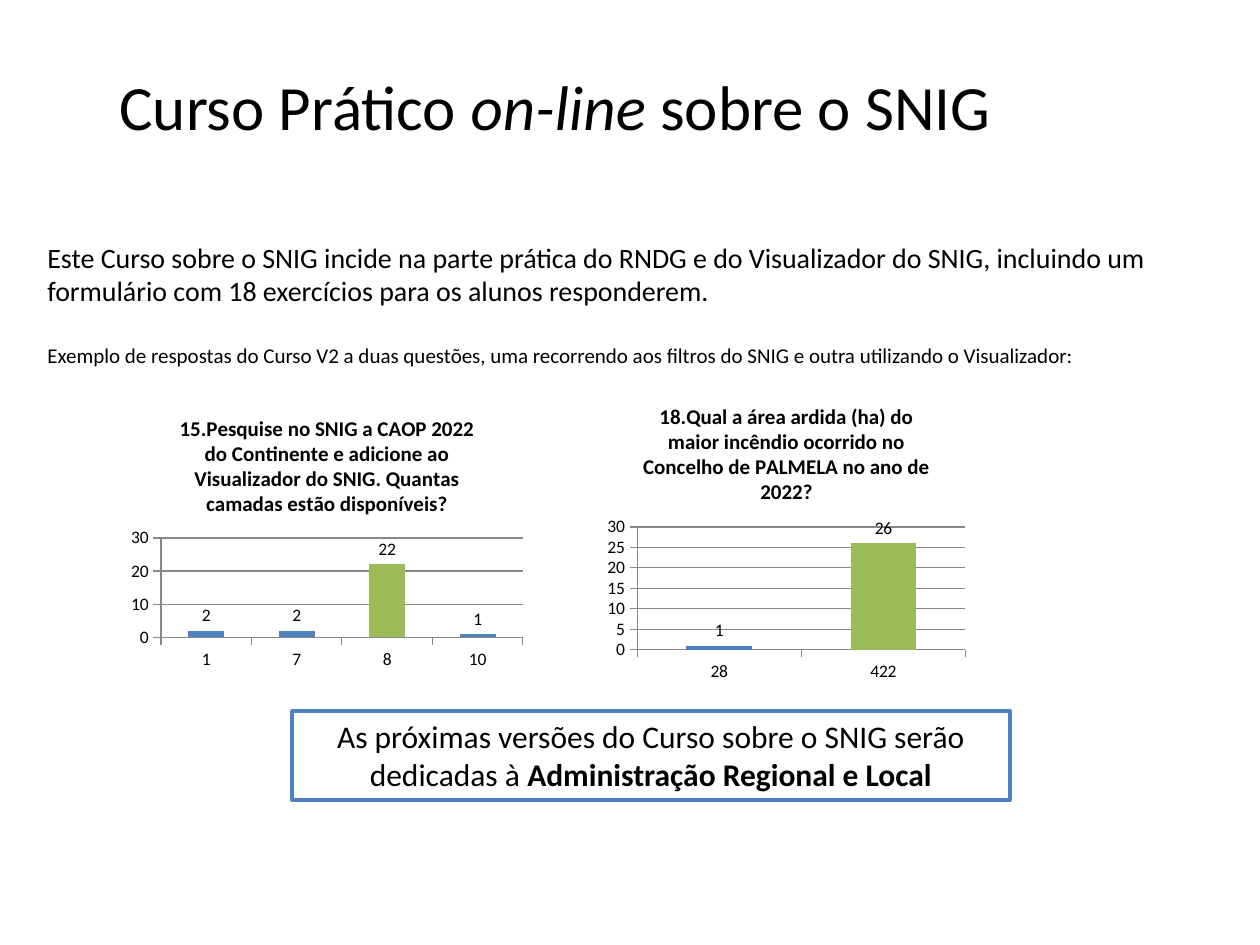
"""Build the slide about the practical on-line SNIG course."""
from dataclasses import dataclass
from typing import Any

from pptx import Presentation
from pptx.chart.data import CategoryChartData
from pptx.dml.color import RGBColor
from pptx.enum.chart import XL_CHART_TYPE, XL_LABEL_POSITION, XL_TICK_MARK
from pptx.enum.shapes import MSO_SHAPE
from pptx.enum.text import MSO_ANCHOR, PP_ALIGN
from pptx.util import Emu, Pt

COLUMNS = XL_CHART_TYPE.COLUMN_CLUSTERED
OUTSIDE_END = XL_LABEL_POSITION.OUTSIDE_END
TICK_OUTSIDE = XL_TICK_MARK.OUTSIDE
RECTANGLE = MSO_SHAPE.RECTANGLE
MIDDLE, TOP = MSO_ANCHOR.MIDDLE, MSO_ANCHOR.TOP
CENTER, LEFT = PP_ALIGN.CENTER, PP_ALIGN.LEFT

PX_PER_INCH = 126
EMU_PER_PX = 914400 / PX_PER_INCH
FONT = "Calibri"
COLORS = {
    "text": "000000",
    "paper": "FFFFFF",
    "bar": "4F81BD",
    "correct": "9BBB59",
    "axis": "878787",
}


@dataclass(frozen=True)
class Box:
    left: int
    top: int
    width: int
    height: int

    def emu(self) -> tuple[Emu, ...]:
        return tuple(px(n) for n in (self.left, self.top, self.width, self.height))


@dataclass(frozen=True)
class Run:
    text: str
    bold: bool = False
    italic: bool = False


@dataclass(frozen=True)
class Question:
    box: Box
    title: str
    answers: dict[str, int]
    correct: str
    major_unit: int


QUESTIONS = (
    Question(
        Box(123, 398, 408, 277),
        "15.Pesquise no SNIG a CAOP 2022 do Continente e adicione ao "
        "Visualizador do SNIG. Quantas camadas estão disponíveis?",
        {"1": 2, "7": 2, "8": 22, "10": 1}, "8", 10,
    ),
    Question(
        Box(600, 386, 373, 302),
        "18.Qual a área ardida (ha) do maior incêndio ocorrido no "
        "Concelho de PALMELA no ano de 2022?",
        {"28": 1, "422": 26}, "422", 5,
    ),
)


def px(length: int) -> Emu:
    return Emu(round(length * EMU_PER_PX))


def color(name: str) -> RGBColor:
    return RGBColor.from_string(COLORS[name])


def format_font(font: Any, size: int, bold: bool = False, italic: bool = False) -> None:
    values = {"name": FONT, "size": Pt(size), "bold": bold, "italic": italic}
    for attribute, value in values.items():
        setattr(font, attribute, value)
    font.color.rgb = color("text")


def write(paragraph: Any, runs: list[Run], size: int, alignment: Any) -> None:
    paragraph.alignment = alignment
    for item in runs:
        run = paragraph.add_run()
        run.text = item.text
        format_font(run.font, size, item.bold, item.italic)


def add_title(slide: Any) -> None:
    title = slide.shapes.title
    title.left, title.top, title.width, title.height = Box(63, 26, 984, 158).emu()
    title.text_frame.vertical_anchor = MIDDLE
    runs = [Run("Curso Prático"), Run(" on-line ", italic=True), Run("sobre o SNIG")]
    write(title.text_frame.paragraphs[0], runs, 36, CENTER)


def add_introduction(slide: Any) -> None:
    frame = slide.shapes.add_textbox(*Box(35, 234, 1171, 140).emu()).text_frame
    frame.word_wrap = True
    course = Run(
        "Este Curso sobre o SNIG incide na parte prática do RNDG e do Visualizador "
        "do SNIG, incluindo um formulário com 18 exercícios para os alunos responderem."
    )
    example = Run(
        "Exemplo de respostas do Curso V2 a duas questões, uma recorrendo aos filtros "
        "do SNIG e outra utilizando o Visualizador:"
    )
    write(frame.paragraphs[0], [course], 16, LEFT)
    paragraph = frame.add_paragraph()
    paragraph.space_before = Pt(20)
    write(paragraph, [example], 12, LEFT)


def add_next_versions(slide: Any) -> None:
    shape = slide.shapes.add_shape(RECTANGLE, *Box(292, 711, 718, 89).emu())
    shape.shadow.inherit = False
    shape.fill.solid()
    shape.fill.fore_color.rgb = color("paper")
    shape.line.color.rgb = color("bar")
    shape.line.width = Pt(2)
    frame = shape.text_frame
    frame.word_wrap = True
    frame.vertical_anchor = TOP
    runs = [
        Run("As próximas versões do Curso sobre o SNIG serão dedicadas à "),
        Run("Administração Regional e Local", bold=True),
    ]
    write(frame.paragraphs[0], runs, 18, CENTER)


def format_axes(chart: Any, major_unit: int) -> None:
    values = {
        "minimum_scale": 0,
        "maximum_scale": 30,
        "major_unit": major_unit,
        "has_major_gridlines": True,
    }
    for attribute, value in values.items():
        setattr(chart.value_axis, attribute, value)
    for axis in (chart.category_axis, chart.value_axis):
        axis.major_tick_mark = TICK_OUTSIDE
        axis.format.line.color.rgb = color("axis")
    chart.value_axis.major_gridlines.format.line.color.rgb = color("axis")


def add_question(slide: Any, question: Question) -> None:
    data = CategoryChartData()
    data.categories = list(question.answers)
    data.add_series("Series 1", list(question.answers.values()))
    chart = slide.shapes.add_chart(COLUMNS, *question.box.emu(), data).chart
    format_font(chart.font, 10)
    chart.has_legend = False
    chart.has_title = True
    chart.chart_title.include_in_layout = False
    title = chart.chart_title.text_frame.paragraphs[0]
    write(title, [Run(question.title, bold=True)], 12, CENTER)
    format_axes(chart, question.major_unit)

    plot = chart.plots[0]
    plot.gap_width = 150
    plot.vary_by_categories = False
    plot.has_data_labels = True
    plot.data_labels.show_value = True
    plot.data_labels.position = OUTSIDE_END
    series = plot.series[0]
    correct_point = series.points[list(question.answers).index(question.correct)]
    for bars, name in ((series, "bar"), (correct_point, "correct")):
        bars.format.fill.solid()
        bars.format.fill.fore_color.rgb = color(name)


def main() -> None:
    presentation = Presentation()
    presentation.slide_width = px(10 * PX_PER_INCH)
    presentation.slide_height = px(945)
    slide = presentation.slides.add_slide(presentation.slide_layouts[5])
    add_title(slide)
    add_next_versions(slide)
    add_introduction(slide)
    for question in QUESTIONS:
        add_question(slide, question)
    presentation.save("out.pptx")


if __name__ == "__main__":
    main()
